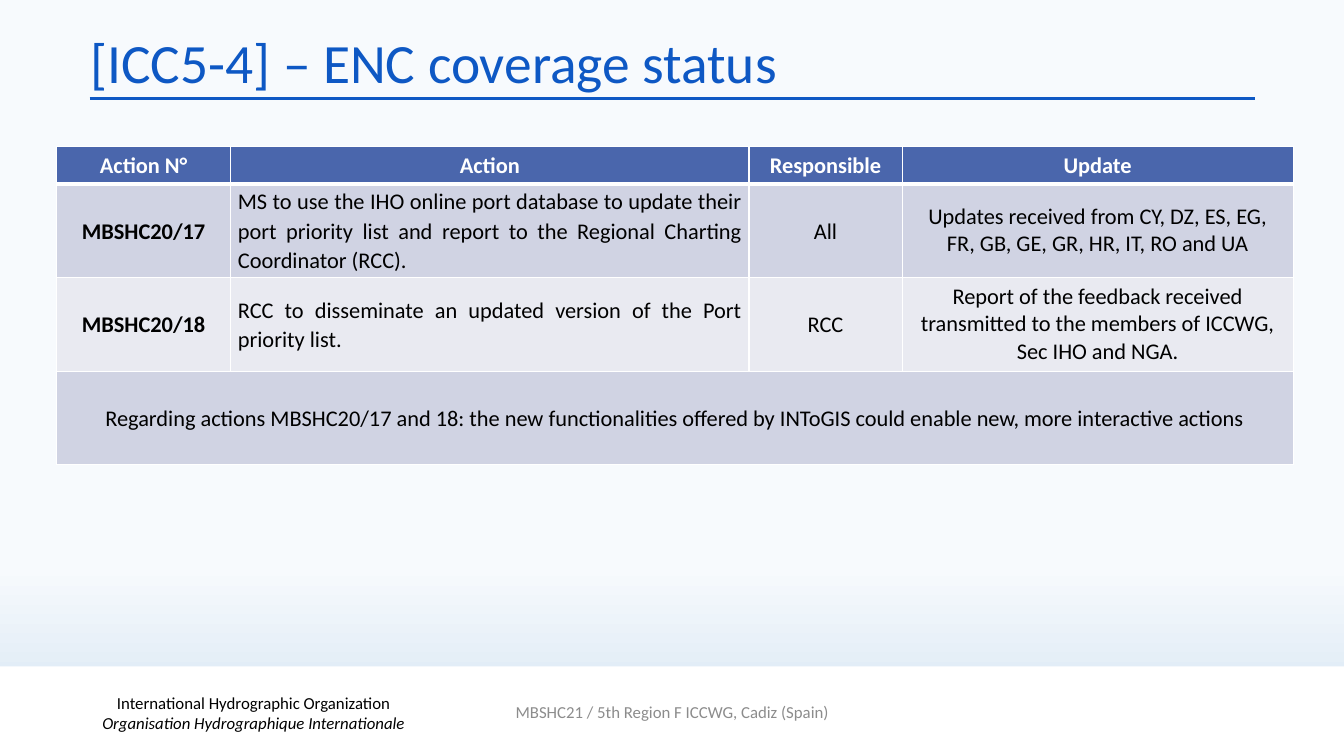
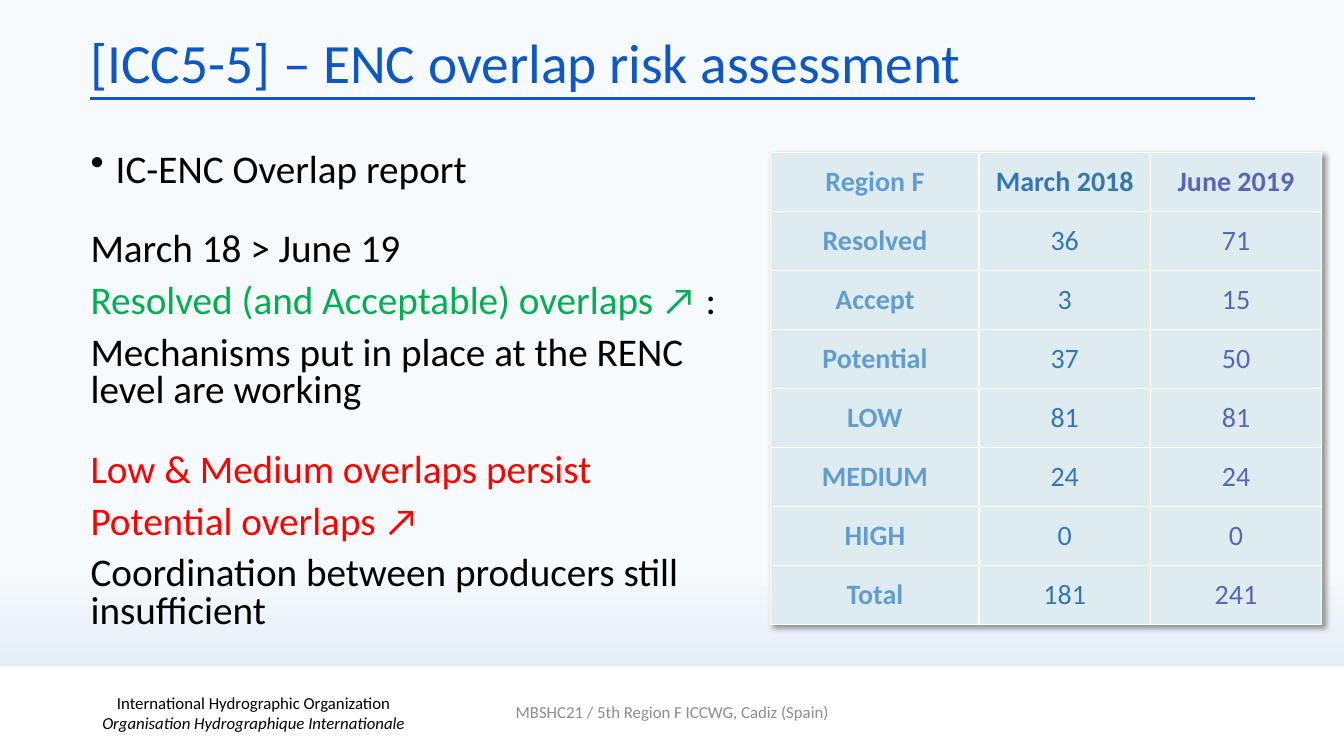
from lxml import etree
from pptx import Presentation, util as u
from pptx.dml.color import RGBColor
from pptx.enum import shapes, text
from pptx.oxml import parse_xml
from pptx.oxml.ns import nsdecls, qn

W, H = u.Inches(13.333), u.Inches(7.5)
FONT = "Calibri"
C = {
    "title": "0E58C4", "sky": "F7FAFD", "horizon": "D0E2F1",
    "white": "FFFFFF", "black": "000000", "grey": "8C8C8C",
    "header": "4A66AC", "odd_row": "D0D3E3", "even_row": "E9EAF1",
    "good": "00B050", "bad": "FF0000", "count_fill": "DEECEF",
    "label": "629DD1", "march": "3477B2", "june": "5C64B7",
}
LEFT, CENTER, JUSTIFY = (text.PP_ALIGN.LEFT, text.PP_ALIGN.CENTER,
                         text.PP_ALIGN.JUSTIFY)
MIDDLE, TOP = text.MSO_ANCHOR.MIDDLE, text.MSO_ANCHOR.TOP
EDGES = ("lnL", "lnR", "lnT", "lnB")


def rgb(name):
    return RGBColor.from_string(C[name])


def across(pct):
    """Length as a percentage of the slide width."""
    return round(W * pct / 100)


def down(pct):
    """Length as a percentage of the slide height."""
    return round(H * pct / 100)


def box(x, y, w, h):
    return across(x), down(y), across(w), down(h)


def write(tf, words, size=16, color="black", bold=False, italic=False,
          align=LEFT, spacing=None, before=None, bullet=False, inline=False):
    """Add a paragraph, or with inline a run in the last paragraph."""
    p = tf.paragraphs[-1]
    if not inline:
        if p.runs:
            p = tf.add_paragraph()
        p.alignment, p.line_spacing = align, spacing
        if before:
            p.space_before = u.Pt(before)
        if bullet:
            pPr = p._p.get_or_add_pPr()
            indent = u.Inches(0.25)
            pPr.set("marL", str(indent))
            pPr.set("indent", str(-indent))
            etree.SubElement(pPr, qn("a:buChar")).set("char", "•")
    r = p.add_run()
    r.text = words
    f = r.font
    f.name, f.size, f.bold, f.italic = FONT, u.Pt(size), bold, italic
    f.color.rgb = rgb(color)


def add_text(s, x, y, w, h, anchor=MIDDLE):
    tf = s.shapes.add_textbox(*box(x, y, w, h)).text_frame
    tf.word_wrap, tf.vertical_anchor = True, anchor
    return tf


def set_borders(cell, widths):
    tcPr = cell._tc.get_or_add_tcPr()
    for edge, width in zip(EDGES, widths):
        tcPr.append(parse_xml(
            f'<a:{edge} {nsdecls("a")} w="{u.Pt(width)}"><a:solidFill>'
            f'<a:srgbClr val="{C["white"]}"/></a:solidFill></a:{edge}>'))


def add_table(s, x, y, cols, heights, rows, style):
    """Draw rows; the last cell of a short row spans the columns left over.

    style(row, col) gives fill, side and vertical insets, and text format.
    """
    frame = s.shapes.add_table(len(rows), len(cols),
                               *box(x, y, sum(cols), sum(heights)))
    table = frame.table
    table.first_row = table.horz_banding = False
    for col, width in zip(table.columns, cols):
        col.width = across(width)
    for row, height in zip(table.rows, heights):
        row.height = down(height)
    for i, words in enumerate(rows):
        if len(words) < len(cols):
            table.cell(i, len(words) - 1).merge(table.cell(i, len(cols) - 1))
        for j in range(len(cols)):
            cell = table.cell(i, j)
            fill, side, vertical, rule, fmt = style(i, j)
            set_borders(cell, (1, 1, rule if i == 1 else 1,
                               rule if i == 0 else 1))
            cell.fill.solid()
            cell.fill.fore_color.rgb = rgb(fill)
            cell.vertical_anchor = MIDDLE
            cell.margin_left = cell.margin_right = u.Inches(side)
            cell.margin_top = cell.margin_bottom = u.Inches(vertical)
            if j < len(words):
                write(cell.text_frame, words[j], **fmt)
    return table


def add_table_shadow(table):
    table._tbl.tblPr.insert(0, parse_xml(
        f'<a:effectLst {nsdecls("a")}><a:outerShdw blurRad="{u.Pt(4)}" '
        f'dist="{u.Pt(3)}" dir="2700000" algn="tl" rotWithShape="0">'
        '<a:srgbClr val="000000"><a:alpha val="40000"/></a:srgbClr>'
        '</a:outerShdw></a:effectLst>'))


def add_base(prs, title):
    """Add a slide with the shared background, title, rule and footer."""
    s = prs.slides.add_slide(prs.slide_layouts[6])
    bg = s.background.fill
    bg.gradient()
    bg.gradient_angle = 270
    for stop, pos, color in zip(bg.gradient_stops, (0.75, 1),
                                ("sky", "horizon")):
        stop.position, stop.color.rgb = pos, rgb(color)

    rule = s.shapes.add_connector(shapes.MSO_CONNECTOR.STRAIGHT, across(6.67),
                                  down(13.07), across(93.37), down(13.07))
    rule.line.color.rgb, rule.line.width = rgb("title"), u.Pt(2.25)
    etree.SubElement(rule._element.spPr, qn("a:effectLst"))

    band = s.shapes.add_shape(shapes.MSO_SHAPE.RECTANGLE,
                              *box(0, 88.13, 100, 11.87))
    band.shadow.inherit = False
    band.fill.solid()
    band.fill.fore_color.rgb = rgb("white")
    band.line.fill.background()

    tf = add_text(s, 2, 91.6, 33.75, 5.33)
    write(tf, "International Hydrographic Organization", size=12, align=CENTER)
    write(tf, "Organisation Hydrographique Internationale", size=12,
          italic=True, align=CENTER)
    write(add_text(s, 33.15, 91.47, 33.75, 5.33),
          "MBSHC21 / 5th Region F ICCWG, Cadiz (Spain)",
          size=12, color="grey", align=CENTER)
    write(add_text(s, 6, 4, 73.65, 9.33), title, size=39.6, color="title",
          spacing=0.9)
    return s


def action_style(i, j):
    if i == 0:
        return "header", 0.1, 0.05, 3, dict(color="white", bold=True,
                                            align=CENTER)
    fill = "odd_row" if i % 2 else "even_row"
    if j == 3:
        return fill, 0.1, 0.05, 3, dict(align=CENTER)
    fmt = dict(bold=j == 0 and i < 3, align=JUSTIFY if j == 1 else CENTER,
               spacing=1.07)
    return fill, 0.07, 0, 3, fmt


def count_style(i, j):
    fmt = dict(size=20, color=("label", "march", "june")[j],
               bold=i == 0 or j == 0, align=CENTER)
    return "count_fill", 0.01, 0.01, 1, fmt


def add_coverage_slide(prs):
    s = add_base(prs, "[ICC5-4] – ENC coverage status")
    rows = [
        ("Action N°", "Action", "Responsible", "Update"),
        ("MBSHC20/17",
         "MS to use the IHO online port database to update their port "
         "priority list and report to the Regional Charting Coordinator "
         "(RCC).",
         "All",
         "Updates received from CY, DZ, ES, EG, FR, GB, GE, GR, HR, IT, RO "
         "and UA"),
        ("MBSHC20/18",
         "RCC to disseminate an updated version of the Port priority list.",
         "RCC",
         "Report of the feedback received transmitted to the members of "
         "ICCWG, Sec IHO and NGA."),
        ("Regarding actions MBSHC20/17 and 18: the new functionalities "
         "offered by INToGIS could enable new, more interactive actions",),
    ]
    add_table(s, 4.2, 19.4, (12.98, 38.55, 11.4, 29.1),
              (4.8,) + (12.4,) * 3, rows, action_style)


def add_overlap_slide(prs):
    s = add_base(prs, "[ICC5-5] – ENC overlap risk assessment")
    tf = add_text(s, 6, 19.6, 50.8, 66, anchor=TOP)
    lines = [
        ("IC-ENC Overlap report", dict(bullet=True)),
        ("March 18 > June 19", dict(before=30)),
        ("Resolved (and Acceptable) overlaps ↗ ",
         dict(color="good", before=10)),
        (":", dict(inline=True)),
        ("Mechanisms put in place at the RENC level are working",
         dict(before=10)),
        ("Low & Medium overlaps persist", dict(color="bad", before=30)),
        ("Potential overlaps ↗", dict(color="bad", before=10)),
        ("Coordination between producers still insufficient",
         dict(before=10)),
    ]
    for words, fmt in lines:
        write(tf, words, size=28, spacing=0.8, **fmt)

    rows = [
        ("Region F", "March 2018", "June 2019"),
        ("Resolved", "36", "71"),
        ("Accept", "3", "15"),
        ("Potential", "37", "50"),
        ("LOW", "81", "81"),
        ("MEDIUM", "24", "24"),
        ("HIGH", "0", "0"),
        ("Total", "181", "241"),
    ]
    table = add_table(s, 57.35, 20.2, (15.5, 12.75, 12.75),
                      (7.8,) * len(rows), rows, count_style)
    add_table_shadow(table)


def main():
    prs = Presentation()
    prs.slide_width, prs.slide_height = W, H
    add_coverage_slide(prs)
    add_overlap_slide(prs)
    prs.save("out.pptx")


if __name__ == "__main__":
    main()
